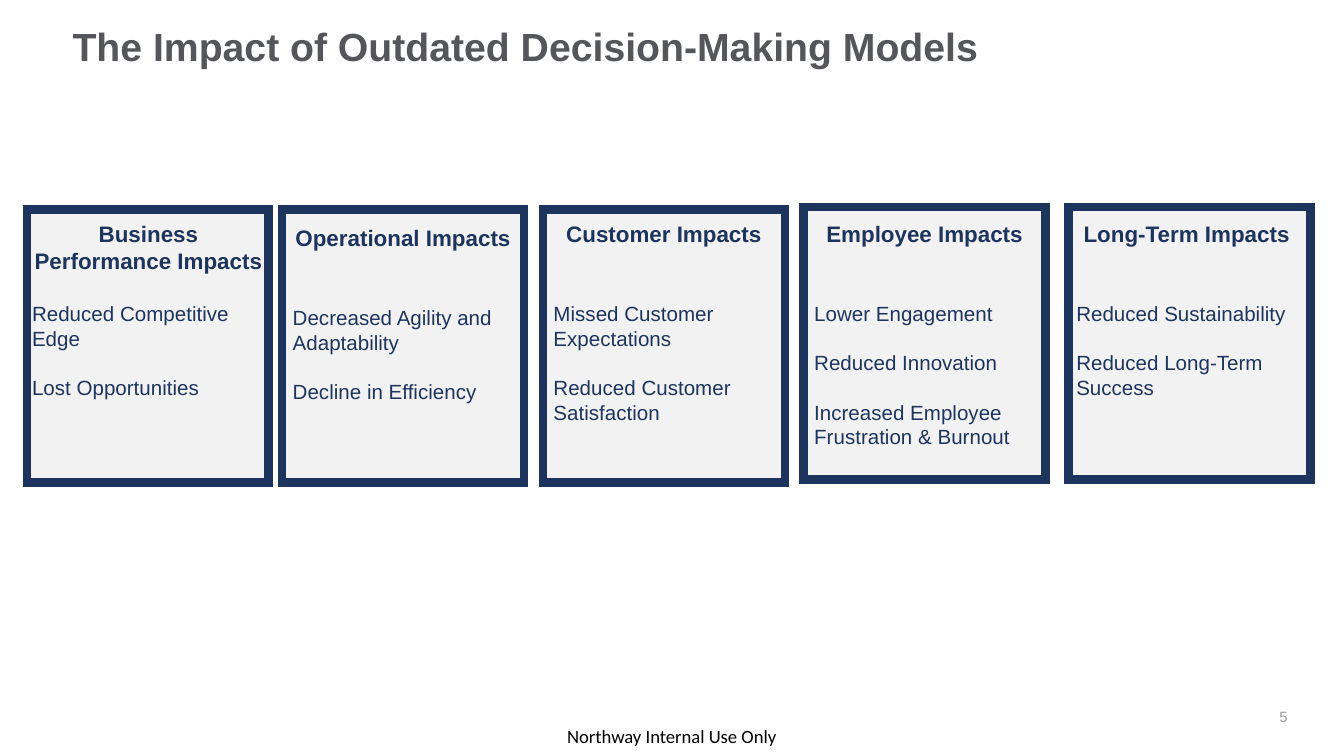
import pptx
import pptx.dml.color
import pptx.enum.shapes
import pptx.enum.text
import pptx.oxml.ns
import pptx.util
import lxml.etree

Inches, Pt = pptx.util.Inches, pptx.util.Pt
ALIGN = pptx.enum.text.PP_ALIGN
ANCHOR = pptx.enum.text.MSO_ANCHOR

SLIDE_WIDTH = 10
SLIDE_HEIGHT = SLIDE_WIDTH * 9 / 16

TITLE = "The Impact of Outdated Decision-Making Models"
FOOTER = "Northway Internal Use Only"
PAGE_NUMBER = "5"

# card left, card top, text (left, top, width, height), gap lines, heading, points
IMPACTS = [
    (0.2, 1.56, (0.14, 1.59, 1.93, 1.45), 1, "Business Performance Impacts",
     ["Reduced Competitive Edge", "Lost Opportunities"]),
    (2.1, 1.56, (2.08, 1.62, 1.84, 1.65), 2, "Operational Impacts",
     ["Decreased Agility and Adaptability", "Decline in Efficiency"]),
    (4.04, 1.56, (4.02, 1.59, 1.84, 2), 2, "Customer Impacts",
     ["Missed Customer Expectations", "Reduced Customer Satisfaction"]),
    (5.98, 1.54, (5.96, 1.59, 1.84, 2.02), 2, "Employee Impacts",
     ["Lower Engagement", "Reduced Innovation",
      "Increased Employee Frustration & Burnout"]),
    (7.95, 1.54, (7.91, 1.59, 1.84, 1.65), 2, "Long-Term Impacts",
     ["Reduced Sustainability", "Reduced Long-Term Success"]),
]
CARD_WIDTH, CARD_HEIGHT = 1.8, 2.03

THEME = {
    "font": "Arial", "footer_font": "Calibri",
    "title": "545659", "navy": "1C345E", "card": "F2F2F2",
    "footer": "000000", "number": "97999D",
    "title_size": 21, "heading_size": 12, "point_size": 11,
    "footer_size": 10, "number_size": 8,
    "border": 4.5, "leading": 1.2,
}


def color(name):
    return pptx.dml.color.RGBColor.from_string(THEME[name])


def add_box(slide, place, margins=(0.1, 0.05), wrap=True, anchor=ANCHOR.TOP):
    frame = slide.shapes.add_textbox(*map(Inches, place)).text_frame
    frame.word_wrap = wrap
    frame.vertical_anchor = anchor
    frame.margin_left = frame.margin_right = Inches(margins[0])
    frame.margin_top = frame.margin_bottom = Inches(margins[1])
    return frame


def write(paragraph, text, size, ink, bold=False, align=ALIGN.LEFT, font="font"):
    paragraph.alignment = align
    run = paragraph.add_run()
    run.text = text
    run.font.name = THEME[font]
    run.font.size = Pt(THEME[size])
    run.font.bold = bold
    run.font.color.rgb = color(ink)


def add_card(slide, left, top):
    card = slide.shapes.add_shape(
        pptx.enum.shapes.MSO_SHAPE.RECTANGLE,
        *map(Inches, (left, top, CARD_WIDTH, CARD_HEIGHT)))
    card.shadow.inherit = False
    card.fill.solid()
    card.fill.fore_color.rgb = color("card")
    card.line.color.rgb = color("navy")
    card.line.width = Pt(THEME["border"])
    # Square border corners
    border = card.line._get_or_add_ln()
    lxml.etree.SubElement(border, pptx.oxml.ns.qn("a:miter"), lim="800000")


def add_impact_text(slide, place, gap_lines, heading, points):
    frame = add_box(slide, place)
    heading_line = THEME["heading_size"] * THEME["leading"]
    point_line = THEME["point_size"] * THEME["leading"]
    first = frame.paragraphs[0]
    write(first, heading, "heading_size", "navy", True, ALIGN.CENTER)
    first.line_spacing = Pt(heading_line)
    for index, point in enumerate(points):
        paragraph = frame.add_paragraph()
        write(paragraph, point, "point_size", "navy")
        paragraph.line_spacing = Pt(point_line)
        paragraph.space_before = Pt(point_line if index else gap_lines * heading_line)


def main():
    deck = pptx.Presentation()
    deck.slide_width, deck.slide_height = Inches(SLIDE_WIDTH), Inches(SLIDE_HEIGHT)
    slide = deck.slides.add_slide(deck.slide_layouts[6])

    # Footer and page number
    footer = add_box(slide, (4.22, 5.39, 1.58, 0.17), (0, 0), wrap=False)
    write(footer.paragraphs[0], FOOTER, "footer_size", "footer", font="footer_font")
    number = add_box(slide, (9.39, 5.2, 0.19, 0.26), (0, 0.05), anchor=ANCHOR.MIDDLE)
    write(number.paragraphs[0], PAGE_NUMBER, "number_size", "number", align=ALIGN.RIGHT)

    # Title
    title = add_box(slide, (0.54, 0.16, 8.87, 0.56), (0, 0.05))
    write(title.paragraphs[0], TITLE, "title_size", "title", True)
    title.paragraphs[0].line_spacing = 0.9

    # Cards, then their text on top
    for left, top, *_ in IMPACTS:
        add_card(slide, left, top)
    for _, _, *content in IMPACTS:
        add_impact_text(slide, *content)

    deck.save("out.pptx")


if __name__ == "__main__":
    main()
